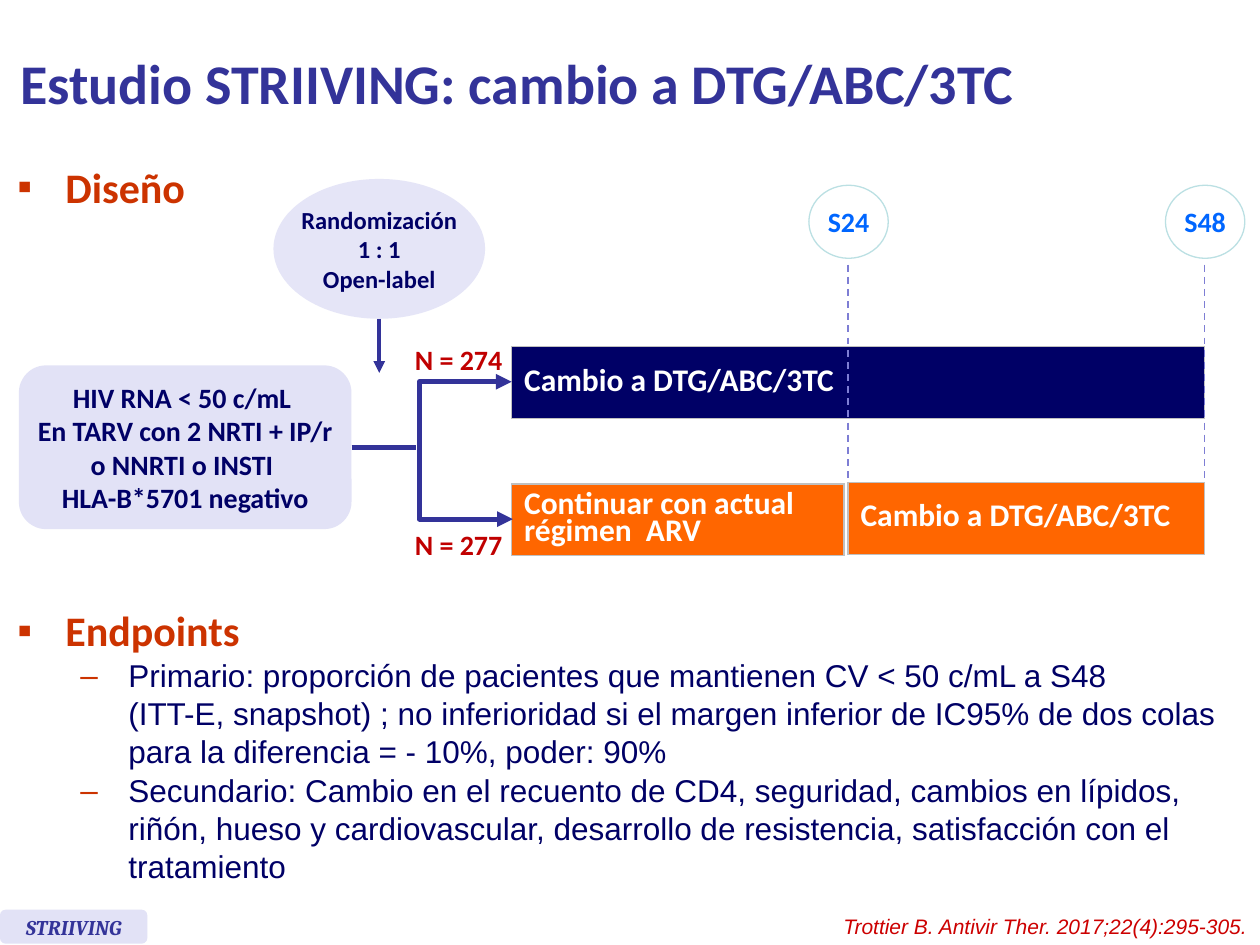
from lxml import etree
from pptx import Presentation
from pptx.dml.color import RGBColor
from pptx.enum.dml import MSO_LINE
from pptx.enum.shapes import MSO_CONNECTOR, MSO_SHAPE
from pptx.enum.text import MSO_ANCHOR, MSO_AUTO_SIZE, PP_ALIGN
from pptx.oxml.ns import qn
from pptx.util import Inches, Pt

LEFT, CENTER, RIGHT = PP_ALIGN.LEFT, PP_ALIGN.CENTER, PP_ALIGN.RIGHT
TOP, MIDDLE = MSO_ANCHOR.TOP, MSO_ANCHOR.MIDDLE
FIXED, GROW = MSO_AUTO_SIZE.NONE, MSO_AUTO_SIZE.SHAPE_TO_FIT_TEXT
STRAIGHT, ELBOW = MSO_CONNECTOR.STRAIGHT, MSO_CONNECTOR.ELBOW
OVAL, ROUNDED = MSO_SHAPE.OVAL, MSO_SHAPE.ROUNDED_RECTANGLE

COLORS = {
    "indigo": "333399", "navy": "000066", "heading": "CC3300", "orange": "FF6600",
    "white": "FFFFFF", "lilac": "E5E5F7", "lavender": "E2E2F6", "border": "C0C0C0",
    "count": "C00000", "citation": "CC0000", "week": "0066FF", "week_ring": "BBE0E3",
    "guide": "7E7ED4",
}
RGB = {role: RGBColor.from_string(value) for role, value in COLORS.items()}


def write(frame, lines, size, color, align=LEFT, font="Calibri", bold=True, italic=False):
    for index, line in enumerate(lines):
        paragraph = frame.paragraphs[0] if index == 0 else frame.add_paragraph()
        paragraph.text = line
        paragraph.alignment = align
        for run in paragraph.runs:
            formats = {"size": Pt(size), "name": font, "bold": bold, "italic": italic}
            for attribute, value in formats.items():
                setattr(run.font, attribute, value)
            run.font.color.rgb = RGB[color]


def connect(kind, start, end, color, width, arrows=(), dash=None):
    connector = slide.shapes.add_connector(kind, *map(Inches, start + end))
    connector.line.color.rgb = RGB[color]
    connector.line.width = Pt(width)
    if dash:
        connector.line.dash_style = dash
    properties = connector._element.spPr
    for arrow in arrows:
        etree.SubElement(properties.find(qn("a:ln")), qn(f"a:{arrow}"), type="triangle")
    etree.SubElement(properties, qn("a:effectLst"))
    return connector


prs = Presentation()
prs.slide_width, prs.slide_height = Inches(10), Inches(7.5)
slide = prs.slides.add_slide(prs.slide_layouts[5])

title = slide.shapes.title
title_formats = {"left": 0.06, "top": 0.05, "width": 8.96, "height": 1.21}
for attribute, value in title_formats.items():
    setattr(title, attribute, Inches(value))
title.text_frame.auto_size = FIXED
title.text_frame.vertical_anchor = MIDDLE
write(title.text_frame, ["Estudio STRIIVING: cambio a DTG/ABC/3TC"], 32, "indigo")

endpoints = [
    "Primario: proporción de pacientes que mantienen CV < 50 c/mL a S48 \n"
    "(ITT-E, snapshot) ; no inferioridad si el margen inferior de IC95% de dos colas "
    "para la diferencia = - 10%, poder: 90%",
    "Secundario: Cambio en el recuento de CD4, seguridad, cambios en lípidos, riñón, "
    "hueso y cardiovascular, desarrollo de resistencia, satisfacción con el tratamiento",
]
sections = [
    ((0.04, 1.23, 1.98, 0.63), "Diseño", []),
    ((0.04, 4.75, 9.91, 2.4), "Endpoints", endpoints),
]
for box, heading, details in sections:
    frame = slide.shapes.add_textbox(*map(Inches, box)).text_frame
    frame.word_wrap = True
    write(frame, [heading] + details, 24, "heading")
    for index, paragraph in enumerate(frame.paragraphs):
        level = min(index, 1)
        paragraph.level = level
        properties = paragraph._p.get_or_add_pPr()
        properties.set("marL", str(Inches((0.38, 0.88)[level])))
        properties.set("indent", str(Inches(-0.38)))
        bullet_color = etree.SubElement(properties, qn("a:buClr"))
        etree.SubElement(bullet_color, qn("a:srgbClr"), val=COLORS["heading"])
        etree.SubElement(properties, qn("a:buFont"), typeface="Arial")
        etree.SubElement(properties, qn("a:buChar"), char="▪–"[level])
        if level:
            paragraph.space_before = Pt(0.8)
            for run in paragraph.runs:
                run.font.size, run.font.name, run.font.bold = Pt(18), "Arial", False
                run.font.color.rgb = RGB["navy"]

arms = [
    ((4.06, 2.75, 5.5, 0.57), "Cambio a DTG/ABC/3TC", "navy", 0.8),
    ((4.06, 3.84, 2.64, 0.57), "Continuar con actual régimen  ARV", "orange", 0.7),
    ((6.73, 3.83, 2.83, 0.57), "Cambio a DTG/ABC/3TC", "orange", 0.7),
]
switch_arm = None
for box, treatment, color, spacing in arms:
    switch_arm = slide.shapes.add_table(1, 1, *map(Inches, box))
    switch_arm.table.first_row = switch_arm.table.horz_banding = False
    cell = switch_arm.table.cell(0, 0)
    cell_properties = cell._tc.get_or_add_tcPr()
    for side in ("lnL", "lnR", "lnT", "lnB"):
        border = etree.SubElement(cell_properties, qn(f"a:{side}"), w=str(Pt(1)))
        border_fill = etree.SubElement(border, qn("a:solidFill"))
        etree.SubElement(border_fill, qn("a:srgbClr"), val=COLORS["border"])
    cell.fill.solid()
    cell.fill.fore_color.rgb = RGB[color]
    cell.vertical_anchor = MIDDLE
    write(cell.text_frame, [treatment], 18, "white")
    cell.text_frame.paragraphs[0].line_spacing = spacing

for week_x in (6.73, 9.56):
    connect(STRAIGHT, (week_x, 2.1), (week_x, 4.41), "guide", 1, dash=MSO_LINE.DASH)
slide.shapes._spTree.append(switch_arm._element)

population = ["HIV RNA < 50 c/mL ", "En TARV con 2 NRTI + IP/r o NNRTI o INSTI ",
              "HLA-B*5701 negativo"]
randomization = ["Randomización", "1 : 1", "Open-label"]
week = {"size": 16, "color": "week"}
nodes = [
    (OVAL, (2.17, 1.42, 1.68, 1.11), "lilac", None, randomization,
     {"size": 14, "color": "navy"}),
    (OVAL, (6.42, 1.47, 0.63, 0.58), "white", "week_ring", ["S24"], week),
    (OVAL, (9.25, 1.47, 0.63, 0.58), "white", "week_ring", ["S48"], week),
    (ROUNDED, (0, 7.22, 1.17, 0.27), "lavender", None, ["STRIIVING"],
     {"size": 12, "color": "indigo", "font": "Cambria", "italic": True}),
    (ROUNDED, (0.15, 2.9, 2.64, 1.3), "lavender", None, population,
     {"size": 16, "color": "navy"}),
]
for preset, box, fill, ring, lines, text_format in nodes:
    node = slide.shapes.add_shape(preset, *map(Inches, box))
    node.shadow.inherit = False
    node.fill.solid()
    node.fill.fore_color.rgb = RGB[fill]
    if ring:
        node.line.color.rgb = RGB[ring]
        node.line.width = Pt(0.75)
    else:
        node.line.fill.background()
    frame = node.text_frame
    frame.vertical_anchor = MIDDLE
    frame.word_wrap = lines is population
    if lines is population:
        frame.margin_left = frame.margin_right = Inches(0.04)
    write(frame, lines, align=CENTER, **text_format)

population_link = connect(STRAIGHT, (2.79, 3.55), (3.3, 3.55), "indigo", 3)
population_link.begin_connect(node, 3)
connect(STRAIGHT, (3.01, 2.53), (3.01, 2.96), "indigo", 2.25, ["tailEnd"])

arm_split = connect(ELBOW, (4.06, 3.03), (4.07, 4.12), "indigo", 3, ["headEnd", "tailEnd"])
bend = arm_split._element.spPr.find(qn("a:prstGeom")).get_or_add_avLst()
etree.SubElement(bend, qn("a:gd"), name="adj1", fmla="val -7400000")

labels = [
    ((3.19, 4.14, 0.9, 0.37), "N = 277", CENTER, {"size": 16, "color": "count"}),
    ((3.19, 2.67, 0.9, 0.37), "N = 274", CENTER, {"size": 16, "color": "count"}),
    ((6.56, 7.2, 3.44, 0.3), "Trottier B. Antivir Ther. 2017;22(4):295-305.", RIGHT,
     {"size": 12, "color": "citation", "font": "Arial", "bold": False, "italic": True}),
]
for box, text, align, text_format in labels:
    frame = slide.shapes.add_textbox(*map(Inches, box)).text_frame
    frame.word_wrap = False
    frame.auto_size = GROW
    frame.vertical_anchor = TOP
    write(frame, [text], align=align, **text_format)

prs.save("out.pptx")
